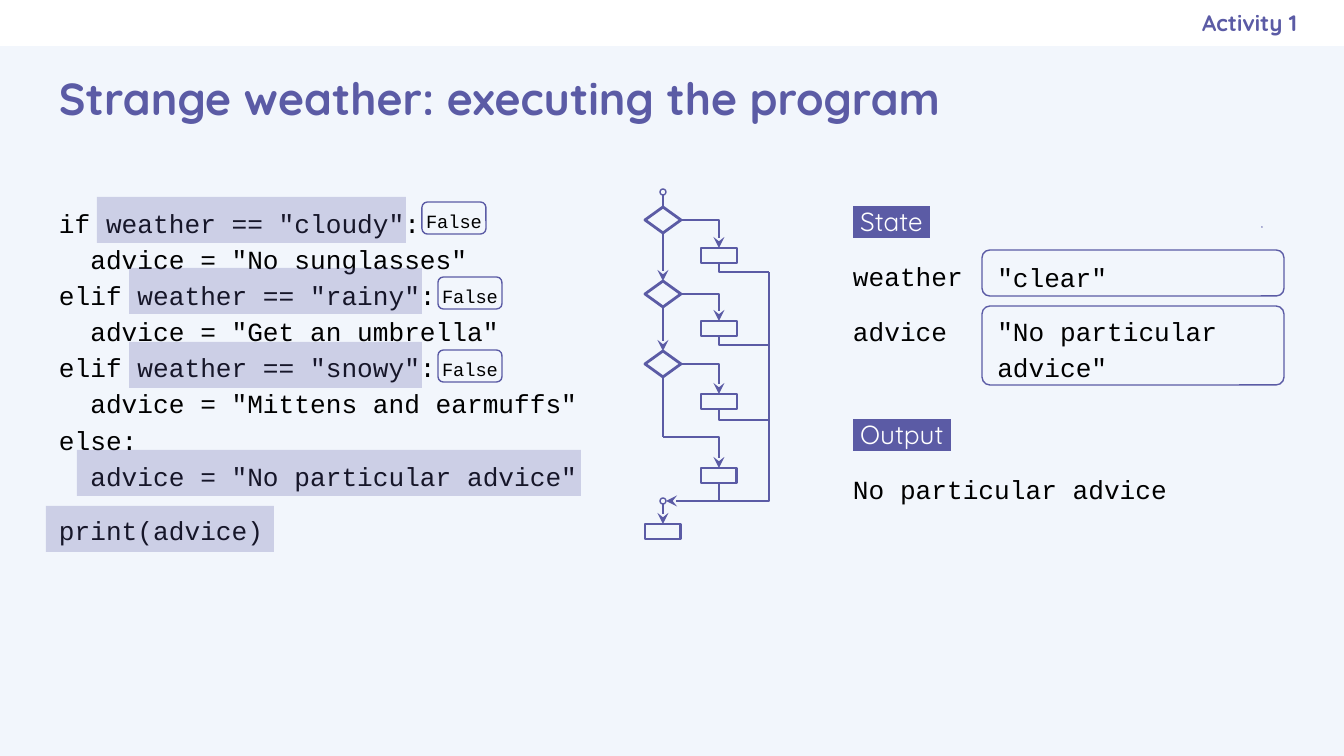
from lxml.etree import SubElement
from pptx import Presentation
from pptx.dml.color import RGBColor
from pptx.enum.shapes import MSO_CONNECTOR, MSO_SHAPE
from pptx.enum.text import MSO_ANCHOR, PP_ALIGN
from pptx.oxml.ns import qn
from pptx.util import Pt

PX = 914400 / 134.4
PURPLE, WHITE, BLACK, PALE = "5B5BA5", "FFFFFF", "000000", "F2F6FC"
THIN, THICK = 0.75, 1.5

CODE = [
    'if weather == "cloudy":',
    '  advice = "No sunglasses"',
    'elif weather == "rainy":',
    '  advice = "Get an umbrella"',
    'elif weather == "snowy":',
    '  advice = "Mittens and earmuffs"',
    "else:",
    '  advice = "No particular advice"',
    "print(advice)",
]
EXECUTED = [(97, 197, 309), (129, 268, 293), (129, 342, 293), (77, 450, 504), (46, 506, 228)]
RESULTS = [("False", 422, 202), ("False", 438, 277), ("False", 438, 350)]
STATE = [("weather", '"clear"', 243, 250, 46, 0.167),
         ("advice", '"No particular advice"', 298, 306, 79, 0.1)]
HEADINGS = [(" State ", 188), (" Output ", 401)]
BRANCHES = [(207, 248, 272), (281, 321, 345), (351, 394, 420)]

MAIN_X, ACTION_X, RAIL_X = 663, 719, 769
NODE_W, DECISION_H, ACTION_H, DOT = 36, 26, 15, 6
START_Y, ELSE_Y, ELSE_TOP, JOIN_Y, PRINT_TOP = 192, 437, 468, 501, 524

MONO = {"name": "Courier New", "size": Pt(14), "bold": False}
SMALL_MONO = {**MONO, "size": Pt(10)}
HEADING = {"name": "Quicksand", "size": Pt(14), "bold": False}
TITLE = {"name": "Quicksand", "size": Pt(24), "bold": True}
ACTIVITY = {**TITLE, "size": Pt(12)}
MIDDLE = {"vertical_anchor": MSO_ANCHOR.MIDDLE}
SPACED = {"line_spacing": 1.15}


def px(*lengths):
    return [round(length * PX) for length in lengths]


def rgb(value):
    return RGBColor.from_string(value)


def apply(target, values):
    for key, value in values.items():
        setattr(target, key, value)


def write(shape, lines, font, color=BLACK, margins=(13, 13, 13, 13), frame={}, paragraph=SPACED):
    text = shape.text_frame
    sides = ("margin_left", "margin_top", "margin_right", "margin_bottom")
    apply(text, {"word_wrap": True, **dict(zip(sides, px(*margins))), **frame})
    for index, line in enumerate(lines):
        part = text.add_paragraph() if index else text.paragraphs[0]
        apply(part, {"alignment": PP_ALIGN.LEFT, **paragraph})
        run = part.add_run()
        run.text = line
        run.font.color.rgb = rgb(color)
        apply(run.font, font)
    return text.paragraphs


def label(slide, box, lines, font, **format_values):
    return write(slide.shapes.add_textbox(*px(*box)), lines, font, **format_values)


def draw(slide, kind, box, fill=None, line=None, alpha=None, corner=None):
    shape = slide.shapes.add_shape(kind, *px(*box))
    shape.shadow.inherit = False
    if fill:
        shape.fill.solid()
        shape.fill.fore_color.rgb = rgb(fill)
    else:
        shape.fill.background()
    if alpha:
        color = shape.fill._xPr.find(qn("a:solidFill"))[0]
        SubElement(color, qn("a:alpha")).set("val", str(alpha * 1000))
    if line:
        shape.line.color.rgb = rgb(PURPLE)
        shape.line.width = Pt(line)
    else:
        shape.line.fill.background()
    if corner:
        shape.adjustments[0] = corner
    return shape


def node(slide, kind, center, top, width, height, line=THIN):
    return draw(slide, kind, (center - width / 2, top, width, height), line=line)


def connect(slide, start, end, width=THIN, arrow=False, bent=False, source=None, target=None):
    kind = MSO_CONNECTOR.ELBOW if bent else MSO_CONNECTOR.STRAIGHT
    link = slide.shapes.add_connector(kind, *px(*start, *end))
    if source:
        link.begin_connect(*source)
    if target:
        link.end_connect(*target)
    link.line.color.rgb = rgb(PURPLE)
    link.line.width = Pt(width)
    properties = link._element.spPr
    if bent:
        properties.find(qn("a:prstGeom")).set("prst", "bentConnector2")
    if arrow:
        SubElement(properties.find(qn("a:ln")), qn("a:tailEnd")).set("type", "stealth")
    SubElement(properties, qn("a:effectLst"))


def flowchart(slide):
    for y in (START_Y, JOIN_Y):
        node(slide, MSO_SHAPE.OVAL, MAIN_X, y - DOT / 2, DOT, DOT)
    decisions = [node(slide, MSO_SHAPE.FLOWCHART_DECISION, MAIN_X, top, NODE_W, DECISION_H, THICK)
                 for top, _, _ in BRANCHES]
    connect(slide, (MAIN_X, START_Y + DOT / 2), (MAIN_X, BRANCHES[0][0]), target=(decisions[0], 0))
    for decision, following in zip(decisions, decisions[1:]):
        connect(slide, (MAIN_X, 0), (MAIN_X, 1), THICK, True,
                source=(decision, 2), target=(following, 0))
    for decision, (top, action_top, merge_y) in zip(decisions, BRANCHES):
        action = node(slide, MSO_SHAPE.RECTANGLE, ACTION_X, action_top, NODE_W, ACTION_H)
        connect(slide, (MAIN_X + NODE_W / 2, top + DECISION_H / 2), (ACTION_X, action_top),
                arrow=True, bent=True, source=(decision, 3), target=(action, 0))
        connect(slide, (RAIL_X, merge_y), (ACTION_X, action_top + ACTION_H),
                bent=True, target=(action, 2))
    connect(slide, (ACTION_X, JOIN_Y), (RAIL_X, BRANCHES[0][2]), bent=True)

    otherwise = node(slide, MSO_SHAPE.RECTANGLE, ACTION_X, ELSE_TOP, NODE_W, ACTION_H, THICK)
    printing = node(slide, MSO_SHAPE.RECTANGLE, MAIN_X, PRINT_TOP, NODE_W, ACTION_H, THICK)
    connect(slide, (MAIN_X, BRANCHES[-1][0] + DECISION_H), (MAIN_X, ELSE_Y), THICK,
            source=(decisions[-1], 2))
    connect(slide, (MAIN_X, ELSE_Y), (ACTION_X, ELSE_TOP), THICK, True, True,
            target=(otherwise, 0))
    connect(slide, (ACTION_X, ELSE_TOP + ACTION_H), (ACTION_X, JOIN_Y), THICK,
            source=(otherwise, 2))
    connect(slide, (ACTION_X, JOIN_Y), (MAIN_X + DOT / 2, JOIN_Y), THICK, True)
    connect(slide, (MAIN_X, JOIN_Y + DOT / 2), (MAIN_X, PRINT_TOP), THICK, True,
            target=(printing, 0))


def main():
    """Build the slide that traces the weather program."""
    deck = Presentation()
    deck.slide_width, deck.slide_height = px(1344, 756)
    slide = deck.slides.add_slide(deck.slide_layouts[6])
    slide.background.fill.solid()
    slide.background.fill.fore_color.rgb = rgb(PALE)

    draw(slide, MSO_SHAPE.RECTANGLE, (0, 0, 1344, 46), fill=WHITE)
    label(slide, (773, 0, 524, 46), ["Activity 1"], ACTIVITY, color=PURPLE,
          margins=(13, 13, 0, 13), frame=MIDDLE, paragraph={"alignment": PP_ALIGN.RIGHT})
    label(slide, (46, 46, 1252, 104), ["Strange weather: executing the program"], TITLE,
          color=PURPLE, frame=MIDDLE, paragraph={})

    code = label(slide, (46, 190, 602, 371), CODE, MONO)
    code[-1].space_before = Pt(10)
    for x, y, width in EXECUTED:
        draw(slide, MSO_SHAPE.RECTANGLE, (x, y, width, 46), fill=PURPLE, alpha=25)
    for result, x, y in RESULTS:
        badge = draw(slide, MSO_SHAPE.ROUNDED_RECTANGLE, (x, y, 64, 32), line=THIN, corner=0.167)
        write(badge, [result], SMALL_MONO, margins=(0, 3, 0, 0), frame=MIDDLE,
              paragraph={**SPACED, "alignment": PP_ALIGN.CENTER})

    flowchart(slide)

    for heading, y in HEADINGS:
        run = label(slide, (840, y, 239, 54), [heading], HEADING, color=WHITE)[0].runs[0]
        highlight = SubElement(run.font._element, qn("a:highlight"))
        SubElement(highlight, qn("a:srgbClr")).set("val", PURPLE)
        run.font._element.find(qn("a:solidFill")).addnext(highlight)
    for variable, value, label_y, y, height, corner in STATE:
        label(slide, (840, label_y, 180, 54), [variable], MONO)
        cell = draw(slide, MSO_SHAPE.ROUNDED_RECTANGLE, (982, y, 302, height),
                    line=THIN, corner=corner)
        write(cell, [value], MONO, margins=(13, 3, 13, 0), frame=MIDDLE)
    label(slide, (840, 456, 458, 54), ["No particular advice"], MONO)
    draw(slide, MSO_SHAPE.OVAL, (1262, 227, 0, 0), line=THIN)
    deck.save("out.pptx")


if __name__ == "__main__":
    main()
